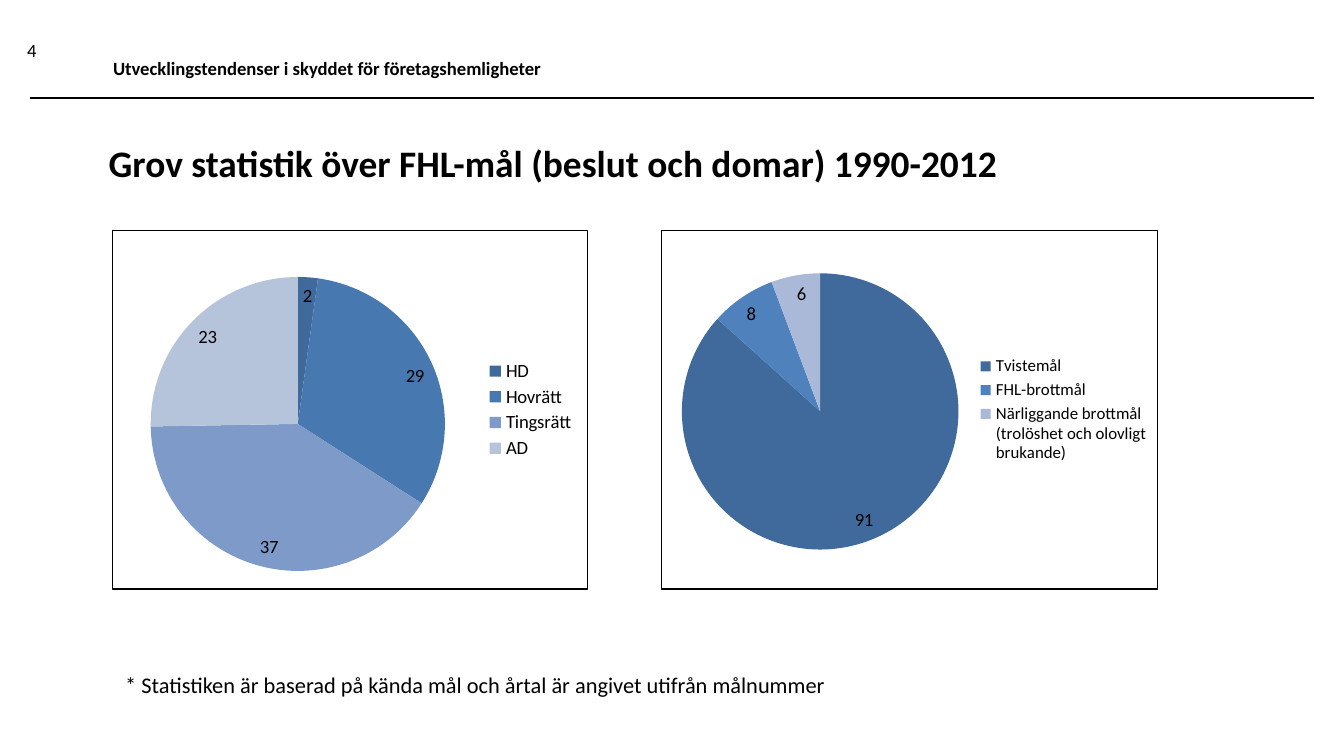
import pptx
import pptx.chart.data
import pptx.dml.color
import pptx.enum.chart
import pptx.enum.text
import pptx.oxml
import pptx.util
from pptx.oxml.ns import nsdecls, qn

Pt = pptx.util.Pt
RGBColor = pptx.dml.color.RGBColor
MIDDLE = pptx.enum.text.MSO_ANCHOR.MIDDLE
TOP = pptx.enum.text.MSO_ANCHOR.TOP

FONT = "Calibri"
BLACK = RGBColor(0x00, 0x00, 0x00)
DARK_BLUE = RGBColor(0x40, 0x69, 0x9C)
BLUE = RGBColor(0x48, 0x78, 0xB0)
LIGHT_BLUE = RGBColor(0x7E, 0x9A, 0xC8)
PALE_BLUE = RGBColor(0xB5, 0xC3, 0xDB)
BRIGHT_BLUE = RGBColor(0x4F, 0x81, 0xBD)
LAVENDER = RGBColor(0xAA, 0xB9, 0xD7)


def style_font(font, size, bold=False):
    font.name = FONT
    font.size = Pt(size)
    font.bold = bold
    font.color.rgb = BLACK


def add_label(slide, box, text, size, bold=False, anchor=TOP, inset=True):
    label = slide.shapes.add_textbox(*map(Pt, box))
    frame = label.text_frame
    frame.word_wrap = True
    frame.vertical_anchor = anchor
    if not inset:
        frame.margin_left = frame.margin_right = Pt(0)
        frame.margin_top = frame.margin_bottom = Pt(0)
    frame.text = text
    style_font(frame.paragraphs[0].font, size, bold)


def add_header(slide, box):
    left, top, width, height = box
    rule = slide.shapes.add_connector(
        pptx.enum.shapes.MSO_CONNECTOR.STRAIGHT,
        Pt(left), Pt(top + height), Pt(left + width), Pt(top + height))
    rule.line.color.rgb = BLACK
    rule.line.width = Pt(0.75)
    rule._element.spPr.append(
        pptx.oxml.parse_xml(f"<a:effectLst {nsdecls('a')}/>"))
    add_label(slide, (left - 1.5, top, 27, 14), "4", 10, inset=False)
    add_label(slide, (left + 37.5, top + 7, 307, 17),
              "Utvecklingstendenser i skyddet för företagshemligheter",
              10, bold=True, anchor=MIDDLE)


def add_title(slide, box):
    title = slide.shapes.title
    title.left, title.top, title.width, title.height = map(Pt, box)
    frame = title.text_frame
    frame.text = "Grov statistik över FHL-mål (beslut och domar) 1990-2012"
    frame.vertical_anchor = MIDDLE
    heading = frame.paragraphs[0]
    heading.alignment = pptx.enum.text.PP_ALIGN.LEFT
    style_font(heading.font, 20, bold=True)


def manual_layout(area, inner=False):
    """Return a chart layout element for area, given in fractions of the chart."""
    target = '<c:layoutTarget val="inner"/>' if inner else ""
    modes = '<c:xMode val="edge"/><c:yMode val="edge"/>'
    sides = "".join(f'<c:{side} val="{value}"/>'
                    for side, value in zip("xywh", area))
    return pptx.oxml.parse_xml(
        f"<c:layout {nsdecls('c')}><c:manualLayout>{target}{modes}{sides}"
        "</c:manualLayout></c:layout>")


def drop_layout(parent):
    for layout in parent.findall(qn("c:layout")):
        parent.remove(layout)


def add_pie(slide, box, cases, pie_area, legend_area, legend_size):
    """Add a framed pie; cases holds (category, count, colour) rows."""
    categories, counts, colours = zip(*cases)
    data = pptx.chart.data.CategoryChartData()
    data.categories = categories
    data.add_series("Series 1", counts)
    chart = slide.shapes.add_chart(
        pptx.enum.chart.XL_CHART_TYPE.PIE, *map(Pt, box), data).chart
    chart.has_title = False
    style_font(chart.font, 10)

    plot = chart.plots[0]
    plot.vary_by_categories = True
    for index, colour in enumerate(colours):
        slice_fill = plot.series[0].points[index].format.fill
        slice_fill.solid()
        slice_fill.fore_color.rgb = colour
    plot.has_data_labels = True
    labels = plot.data_labels
    labels.show_value = True
    labels.show_percentage = False
    labels.position = pptx.enum.chart.XL_LABEL_POSITION.INSIDE_END
    style_font(labels.font, 10)

    chart.has_legend = True
    legend = chart.legend
    legend.position = pptx.enum.chart.XL_LEGEND_POSITION.RIGHT
    legend.include_in_layout = False
    style_font(legend.font, legend_size)

    chart_space = chart._chartSpace
    plot_area = chart_space.chart.plotArea
    drop_layout(plot_area)
    plot_area.insert(0, manual_layout(pie_area, inner=True))
    drop_layout(legend._element)
    legend._element.find(qn("c:legendPos")).addnext(manual_layout(legend_area))
    chart_space.chart.addnext(pptx.oxml.parse_xml(
        f"<c:spPr {nsdecls('c', 'a')}><a:noFill/>"
        f'<a:ln w="{Pt(0.75)}"><a:solidFill><a:srgbClr val="{BLACK}"/>'
        "</a:solidFill></a:ln></c:spPr>"))


def main():
    deck = pptx.Presentation()
    deck.slide_width, deck.slide_height = Pt(720), Pt(405)
    slide = deck.slides.add_slide(deck.slide_layouts.get_by_name("Title Only"))

    add_header(slide, (16, 21, 688, 31.5))
    add_title(slide, (51, 63.5, 635, 47.5))
    add_pie(slide, (60, 123, 255, 193),
            [("HD", 2, DARK_BLUE), ("Hovrätt", 29, BLUE),
             ("Tingsrätt", 37, LIGHT_BLUE), ("AD", 23, PALE_BLUE)],
            pie_area=(0.08, 0.13, 0.62, 0.82),
            legend_area=(0.78, 0.35, 0.2, 0.3), legend_size=10)
    add_pie(slide, (354, 123, 266.5, 193),
            [("Tvistemål", 91, DARK_BLUE), ("FHL-brottmål", 8, BRIGHT_BLUE),
             ("Närliggande brottmål (trolöshet och olovligt brukande)",
              6, LAVENDER)],
            pie_area=(0.04, 0.12, 0.56, 0.77),
            legend_area=(0.63, 0.34, 0.36, 0.32), legend_size=9)
    add_label(slide, (60, 356, 533, 21.5),
              "* Statistiken är baserad på kända mål och årtal är angivet "
              "utifrån målnummer", 12)

    deck.save("out.pptx")


if __name__ == "__main__":
    main()
